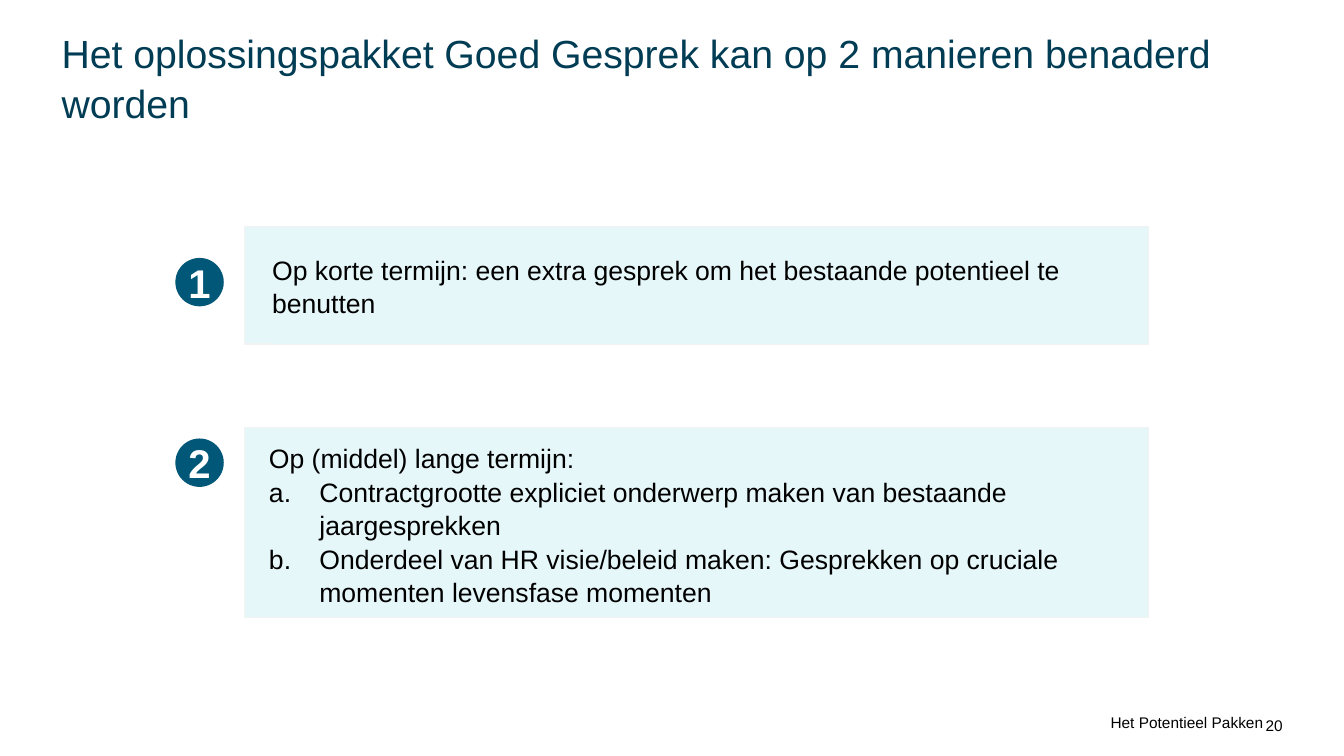
import pptx
import pptx.util
import pptx.dml.color
import pptx.enum.shapes
import pptx.enum.text
import pptx.oxml.ns
from lxml import etree

Cm = pptx.util.Cm
Pt = pptx.util.Pt
Shape = pptx.enum.shapes.MSO_SHAPE
Align = pptx.enum.text.PP_ALIGN
Anchor = pptx.enum.text.MSO_ANCHOR

COLORS = {
    "title": "003C54",
    "disc": "005777",
    "panel": "E6F7FA",
    "edge": "F2F2F2",
    "text": "000000",
    "white": "FFFFFF",
}


class Deck:
    font = "Arial"

    def __init__(self):
        self.prs = pptx.Presentation()
        self.prs.slide_width = Cm(33.87)
        self.prs.slide_height = Cm(19.05)
        self.slide = self.prs.slides.add_slide(self.prs.slide_layouts[5])

    def color(self, name):
        return pptx.dml.color.RGBColor.from_string(COLORS[name])

    def put_text(self, shape, lines, size, color="text", align=Align.LEFT,
                 anchor=Anchor.TOP, wrap=True, bold=False, space=None, listed=False):
        frame = shape.text_frame
        frame.margin_left = frame.margin_right = 0
        frame.margin_top = frame.margin_bottom = 0
        frame.auto_size = pptx.enum.text.MSO_AUTO_SIZE.NONE
        frame.word_wrap = wrap
        frame.vertical_anchor = anchor
        for index, line in enumerate(lines):
            para = frame.add_paragraph() if index else frame.paragraphs[0]
            para.alignment = align
            if space:
                para.line_spacing = space
            if listed and index:
                self.letter(para)
            run = para.add_run()
            run.text = line
            run.font.name = self.font
            run.font.size = Pt(size)
            run.font.bold = bold
            run.font.color.rgb = self.color(color)

    def letter(self, para):
        props = para._p.get_or_add_pPr()
        props.set("marL", str(Cm(1.27)))
        props.set("indent", str(-Cm(1.27)))
        mark = etree.SubElement(props, pptx.oxml.ns.qn("a:buAutoNum"))
        mark.set("type", "alphaLcPeriod")

    def title(self, text, left, top, width, height):
        shape = self.slide.shapes.title
        shape.left, shape.top = Cm(left), Cm(top)
        shape.width, shape.height = Cm(width), Cm(height)
        self.put_text(shape, [text], 28, "title", anchor=Anchor.MIDDLE, space=1.05)

    def shape(self, kind, left, top, width, height, fill, edge=None):
        shape = self.slide.shapes.add_shape(
            kind, Cm(left), Cm(top), Cm(width), Cm(height))
        shape.shadow.inherit = False
        shape.fill.solid()
        shape.fill.fore_color.rgb = self.color(fill)
        if edge:
            shape.line.color.rgb = self.color(edge)
            shape.line.width = Pt(0.75)
        else:
            shape.line.fill.background()
        return shape

    def panel(self, top, height, box, lines):
        self.shape(Shape.RECTANGLE, 6.17, top, 22.78, height, "panel", "edge")
        inner = self.shape(Shape.RECTANGLE, *box, "panel")
        self.put_text(inner, lines, 19, space=1.05, listed=True)

    def disc(self, number, top):
        disc = self.shape(Shape.OVAL, 4.42, top, 1.22, 1.22, "disc")
        self.put_text(disc, [str(number)], 28.6, "white", Align.CENTER,
                      Anchor.MIDDLE, wrap=False, bold=True)

    def label(self, text, left, top, width, align, anchor):
        box = self.slide.shapes.add_textbox(
            Cm(left), Cm(top), Cm(width), Cm(0.48))
        self.put_text(box, [text], 11, align=align, anchor=anchor, wrap=False)


def main():
    deck = Deck()
    deck.label("20", 31.62, 18.03, 0.71, Align.RIGHT, Anchor.MIDDLE)
    deck.label("Het Potentieel Pakken", 27.97, 17.96, 3.89,
               Align.CENTER, Anchor.BOTTOM)
    deck.title("Het oplossingspakket Goed Gesprek kan op 2 manieren benaderd worden",
               1.55, 1.32, 30.78, 1.22)
    deck.panel(10.77, 4.8, (6.78, 11.1, 20.5, 4.06), [
        "Op (middel) lange termijn:",
        "Contractgrootte expliciet onderwerp maken van bestaande jaargesprekken",
        "Onderdeel van HR visie/beleid maken: Gesprekken op cruciale momenten "
        "levensfase momenten",
    ])
    deck.panel(5.72, 2.95, (6.86, 6.35, 22.07, 2.32), [
        "Op korte termijn: een extra gesprek om het bestaande potentieel te benutten",
    ])
    for number, top in enumerate((6.5, 11.05), 1):
        deck.disc(number, top)
    deck.prs.save("out.pptx")


if __name__ == "__main__":
    main()
